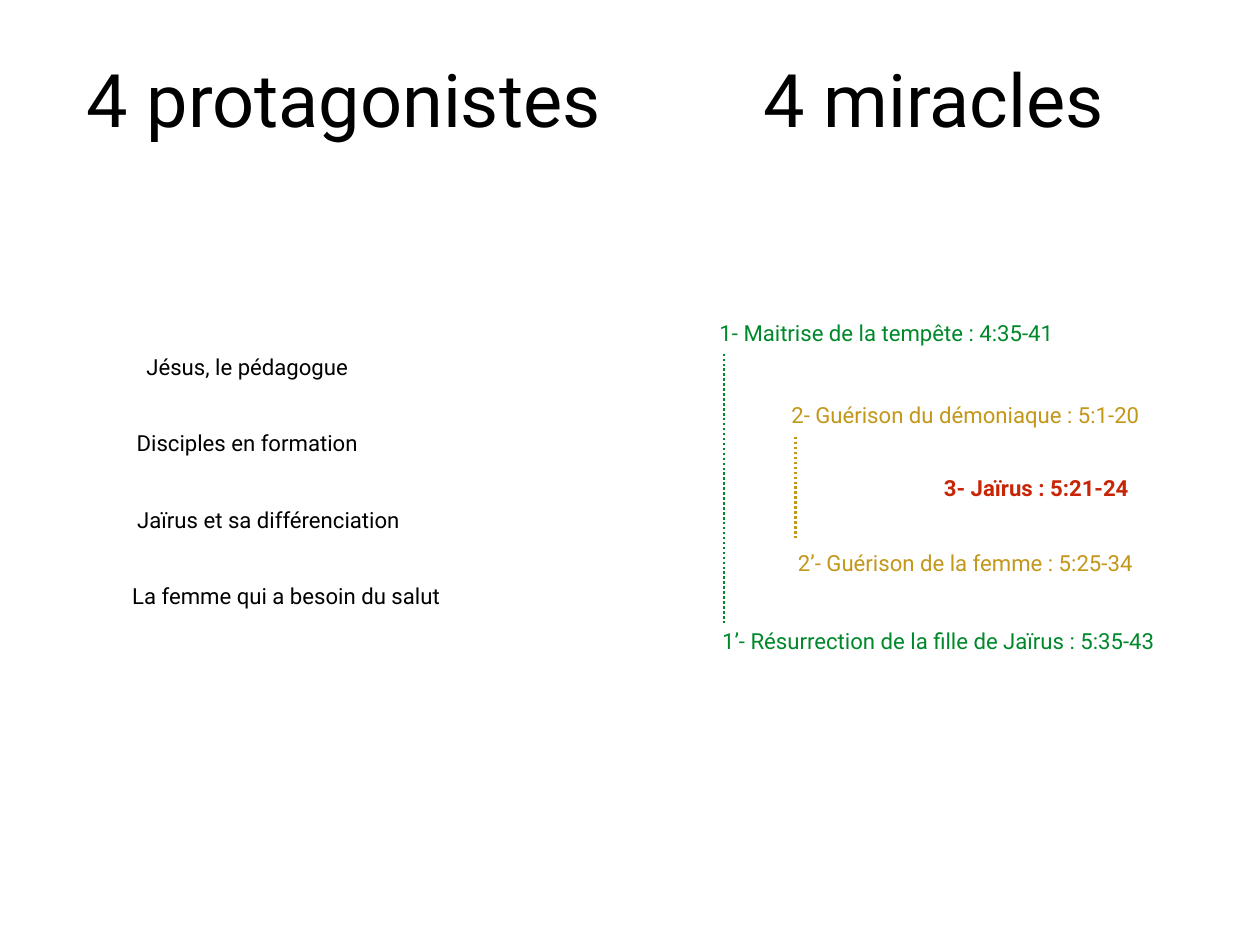
from pptx import Presentation
from pptx.dml.color import RGBColor
from pptx.enum.dml import MSO_LINE_DASH_STYLE as DASH
from pptx.enum.shapes import MSO_CONNECTOR
from pptx.enum.text import MSO_ANCHOR, PP_ALIGN
from pptx.util import Inches, Pt
from lxml.etree import SubElement
from pptx.oxml.ns import qn

BLACK = RGBColor(0x00, 0x00, 0x00)
GREEN = RGBColor(0x00, 0x88, 0x2B)
GOLD = RGBColor(0xC3, 0x97, 0x1A)
RED = RGBColor(0xC8, 0x25, 0x06)

FONT = "Roboto"
INSET = 0.06
TITLE_TOP, TITLE_WIDTH, TITLE_HEIGHT = -0.07, 5.96, 2.36
ROW_HEIGHT = 0.42
PROTAGONIST_TOP, PROTAGONIST_STEP, PROTAGONIST_WIDTH = 3.93, 0.863, 3.64

TITLES = [("4 protagonistes", 0.9), ("4 miracles", 7.56)]
PROTAGONISTS = [
    ("Jésus, le pédagogue", 0.97),
    ("Disciples en formation", 0.97),
    ("Jaïrus et sa différenciation", 1.21),
    ("La femme qui a besoin du salut", 1.41),
]
MIRACLES = [
    ("1- Maitrise de la tempête : 4:35-41", 7.51, 3.55, 4.99, GREEN, False),
    ("2- Guérison du démoniaque : 5:1-20", 8.4, 4.47, 4.99, GOLD, False),
    ("3- Jaïrus : 5:21-24", 9.2, 5.3, 4.99, RED, True),
    ("2’- Guérison de la femme : 5:25-34", 8.4, 6.14, 4.99, GOLD, False),
    ("1’- Résurrection de la fille de Jaïrus : 5:35-43", 7.61, 7.02, 5.96, GREEN, False),
]
LINKS = [(8.17, 7.04, 3.98, GREEN), (8.98, 6.08, 4.94, GOLD)]


def add_text(slide, text, left, top, width, height, size=18, color=BLACK, bold=False):
    box = slide.shapes.add_textbox(Inches(left), Inches(top), Inches(width), Inches(height))
    frame = box.text_frame
    frame.text = text
    frame.word_wrap = True
    frame.vertical_anchor = MSO_ANCHOR.MIDDLE
    frame.margin_left = frame.margin_right = Inches(INSET)
    frame.margin_top = frame.margin_bottom = Inches(INSET)
    paragraph = frame.paragraphs[0]
    paragraph.alignment = PP_ALIGN.CENTER
    font = paragraph.runs[0].font
    font.name = FONT
    font.size = Pt(size)
    font.bold = bold
    font.color.rgb = color


def add_link(slide, x, bottom, top, color):
    connector = slide.shapes.add_connector(
        MSO_CONNECTOR.STRAIGHT, Inches(x), Inches(bottom), Inches(x), Inches(top))
    connector.line.color.rgb = color
    connector.line.width = Pt(2)
    connector.line.dash_style = DASH.ROUND_DOT
    SubElement(connector._element.spPr, qn("a:effectLst"))


def main():
    presentation = Presentation()
    presentation.slide_width = Inches(14.22)
    presentation.slide_height = Inches(10.67)
    slide = presentation.slides.add_slide(presentation.slide_layouts[6])

    for text, left in TITLES:
        add_text(slide, text, left, TITLE_TOP, TITLE_WIDTH, TITLE_HEIGHT, size=60)
    for text, left, top, width, color, bold in MIRACLES:
        add_text(slide, text, left, top, width, ROW_HEIGHT, color=color, bold=bold)
    for x, bottom, top, color in LINKS:
        add_link(slide, x, bottom, top, color)
    for row, (text, left) in enumerate(PROTAGONISTS):
        top = PROTAGONIST_TOP + row * PROTAGONIST_STEP
        add_text(slide, text, left, top, PROTAGONIST_WIDTH, ROW_HEIGHT)

    presentation.save("out.pptx")


if __name__ == "__main__":
    main()
